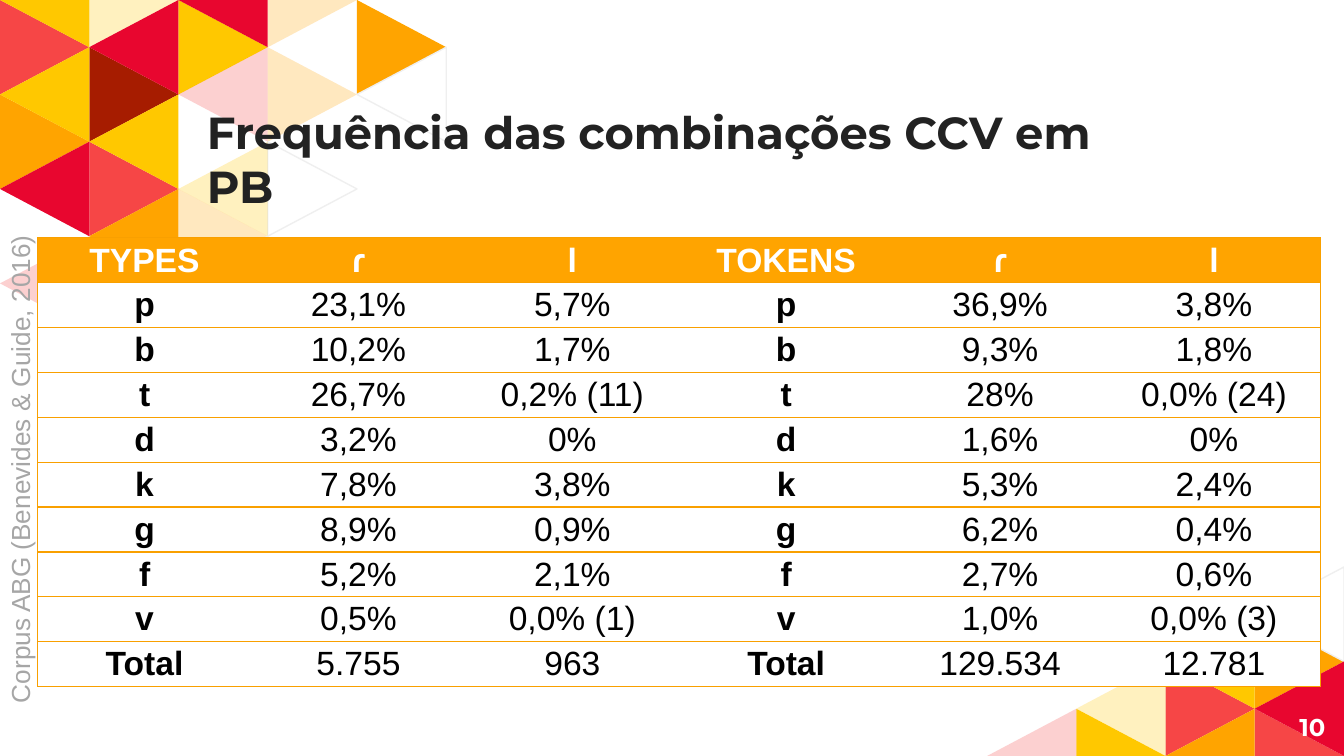
from lxml import etree
from pptx import Presentation, util as u
from pptx.dml.color import RGBColor
from pptx.enum import text as t
from pptx.oxml import ns

# Content
TITLE = "Frequência das combinações CCV em PB"
SOURCE = "Corpus ABG (Benevides & Guide, 2016)"
PAGE = "10"
FREQUENCIES = [
    ("TYPES", "ɾ", "l", "TOKENS", "ɾ", "l"),
    ("p", "23,1%", "5,7%", "p", "36,9%", "3,8%"),
    ("b", "10,2%", "1,7%", "b", "9,3%", "1,8%"),
    ("t", "26,7%", "0,2% (11)", "t", "28%", "0,0% (24)"),
    ("d", "3,2%", "0%", "d", "1,6%", "0%"),
    ("k", "7,8%", "3,8%", "k", "5,3%", "2,4%"),
    ("g", "8,9%", "0,9%", "g", "6,2%", "0,4%"),
    ("f", "5,2%", "2,1%", "f", "2,7%", "0,6%"),
    ("v", "0,5%", "0,0% (1)", "v", "1,0%", "0,0% (3)"),
    ("Total", "5.755", "963", "Total", "129.534", "12.781"),
]
COLORS = {"orange": "FFA400", "yellow": "FFC800", "coral": "F64646", "red": "E8062F",
          "brown": "A61C00", "white": "FFFFFF", "outline": "EFEFEF", "ink": "222222",
          "black": "000000", "gray": "A6A6A6", "rule": "F9A000"}

# Triangles as (column, half row, pointing, colour); negative columns count from the right edge
TRIANGLES = [
    (-2, 12, ">", "pale orange"), (-1, 13, ">", "orange"), (-3, 15, ">", "yellow"),
    (-2, 14, ">", "coral"), (-1, 15, ">", "coral"), (-3, 12, "<", "outline"),
    (-1, 12, "<", "outline"), (-2, 13, "<", "yellow"), (-3, 14, "<", "pale yellow"),
    (-2, 15, "<", "orange"), (-1, 14, "<", "red"), (-4, 15, "<", "pale coral"),
    (0, 2, ">", "orange"), (1, 1, ">", "brown"), (1, 3, ">", "coral"),
    (3, 1, ">", "pale orange"), (2, 4, ">", "pale orange"), (3, 3, ">", "outline"),
    (0, 0, ">", "coral"), (1, -1, ">", "pale yellow"), (2, 0, ">", "yellow"),
    (3, -1, ">", "pale orange"), (4, 0, ">", "orange"), (0, 1, "<", "yellow"),
    (1, 2, "<", "yellow"), (0, 3, "<", "red"), (1, 4, "<", "orange"),
    (0, 5, "<", "pale coral"), (2, 1, "<", "pale coral"), (2, 3, "<", "pale yellow"),
    (2, 5, "<", "outline"), (4, 1, "<", "outline"), (0, -1, "<", "yellow"),
    (1, 0, "<", "red"), (2, -1, "<", "red"),
]

# Slide and triangle grid
WIDTH, HEIGHT = u.Inches(10), u.Inches(5.625)
HALF_ROWS = 16
COLUMN, HALF_ROW = u.Inches(3.32) / 5, HEIGHT / HALF_ROWS
NO_TABLE_STYLE = "{2D5ABB26-0587-4C30-8999-92F81FD0307C}"


def rgb(name):
    return RGBColor.from_string(COLORS[name])


def set_all(target, values):
    for key, value in values.items():
        setattr(target, key, value)


def write(frame, content, size, font, color, bold, align, frame_format):
    set_all(frame, frame_format)
    paragraph = frame.paragraphs[0]
    paragraph.alignment = align
    run = paragraph.add_run()
    run.text = content
    set_all(run.font, {"size": u.Pt(size), "name": font, "bold": bold})
    run.font.color.rgb = rgb(color)


def add_triangle(slide, column, row, pointing, color):
    base, apex = (column, column + 1) if pointing == ">" else (column + 1, column)
    origin = WIDTH if column < 0 else 0
    # Corners beyond the slide are cut at its top and bottom edges
    corners = [(round(origin + x * COLUMN), round(min(max(y, 0), HALF_ROWS) * HALF_ROW))
               for x, y in ((base, row), (base, row + 2), (apex, row + 1))]
    builder = slide.shapes.build_freeform(*corners[0], scale=1.0)
    builder.add_line_segments(corners[1:], close=True)
    triangle = builder.convert_to_shape()
    triangle.shadow.inherit = False
    triangle.fill.solid()
    if color == "outline":
        triangle.fill.fore_color.rgb = rgb("white")
        triangle.line.color.rgb = rgb("outline")
        triangle.line.width = u.Pt(0.75)
        return
    triangle.fill.fore_color.rgb = rgb(color.split()[-1])
    triangle.line.fill.background()
    if color.startswith("pale"):
        tint = triangle.fill._xPr.find(".//" + ns.qn("a:srgbClr"))
        etree.SubElement(tint, ns.qn("a:alpha"), val="25000")


def add_label(slide, box, *style, rotation=0, **frame_format):
    label = slide.shapes.add_textbox(*(u.Inches(v) for v in box))
    label.rotation = rotation
    write(label.text_frame, *style, {"word_wrap": True, **frame_format})


def add_border(cell, side):
    line = etree.SubElement(cell._tc.get_or_add_tcPr(), ns.qn("a:" + side), w=str(u.Pt(0.75)))
    fill = etree.SubElement(line, ns.qn("a:solidFill"))
    etree.SubElement(fill, ns.qn("a:srgbClr"), val=COLORS["rule"])


def add_frequencies(slide):
    rows, columns = len(FREQUENCIES), len(FREQUENCIES[0])
    box = [u.Inches(v) for v in (0.28, 1.77, 9.55, 3.34)]
    table = slide.shapes.add_table(rows, columns, *box).table
    table._tbl.tblPr.find(ns.qn("a:tableStyleId")).text = NO_TABLE_STYLE
    for r, record in enumerate(FREQUENCIES):
        for c, value in enumerate(record):
            cell = table.cell(r, c)
            header = r == 0
            sides = {"lnL": c == 0, "lnR": c == columns - 1, "lnT": True, "lnB": True}
            for side, drawn in sides.items():
                if drawn:
                    add_border(cell, side)
            cell.fill.solid()
            cell.fill.fore_color.rgb = rgb("orange" if header else "white")
            set_all(cell, {"margin_left": u.Inches(0.06), "margin_right": u.Inches(0.06),
                           "margin_top": 0, "margin_bottom": 0,
                           "vertical_anchor": t.MSO_ANCHOR.MIDDLE})
            write(cell.text_frame, value, 18, "Arial", "white" if header else "black",
                  header or c % 3 == 0, t.PP_ALIGN.CENTER, {})


def main():
    deck = Presentation()
    set_all(deck, {"slide_width": WIDTH, "slide_height": HEIGHT})
    slide = deck.slides.add_slide(deck.slide_layouts[6])

    # Background pattern
    for triangle in TRIANGLES:
        add_triangle(slide, *triangle)

    # Title, page number, table and source
    inset = {"margin_top": u.Inches(0.1), "margin_bottom": u.Inches(0.1)}
    add_label(slide, (1.44, 0.95, 7.22, 0.73), TITLE, 24, "Montserrat", "ink", True,
              t.PP_ALIGN.LEFT, vertical_anchor=t.MSO_ANCHOR.BOTTOM, **inset)
    add_label(slide, (9.36, 5.19, 0.6, 0.43), PAGE, 13, "Montserrat", "white", True,
              t.PP_ALIGN.RIGHT, vertical_anchor=t.MSO_ANCHOR.MIDDLE, **inset)
    add_frequencies(slide)
    add_label(slide, (-2.76, 2.25, 5.82, 0.34), SOURCE, 14, "Arial", "gray", False,
              t.PP_ALIGN.LEFT, rotation=270, auto_size=t.MSO_AUTO_SIZE.SHAPE_TO_FIT_TEXT)

    deck.save("out.pptx")


if __name__ == "__main__":
    main()
